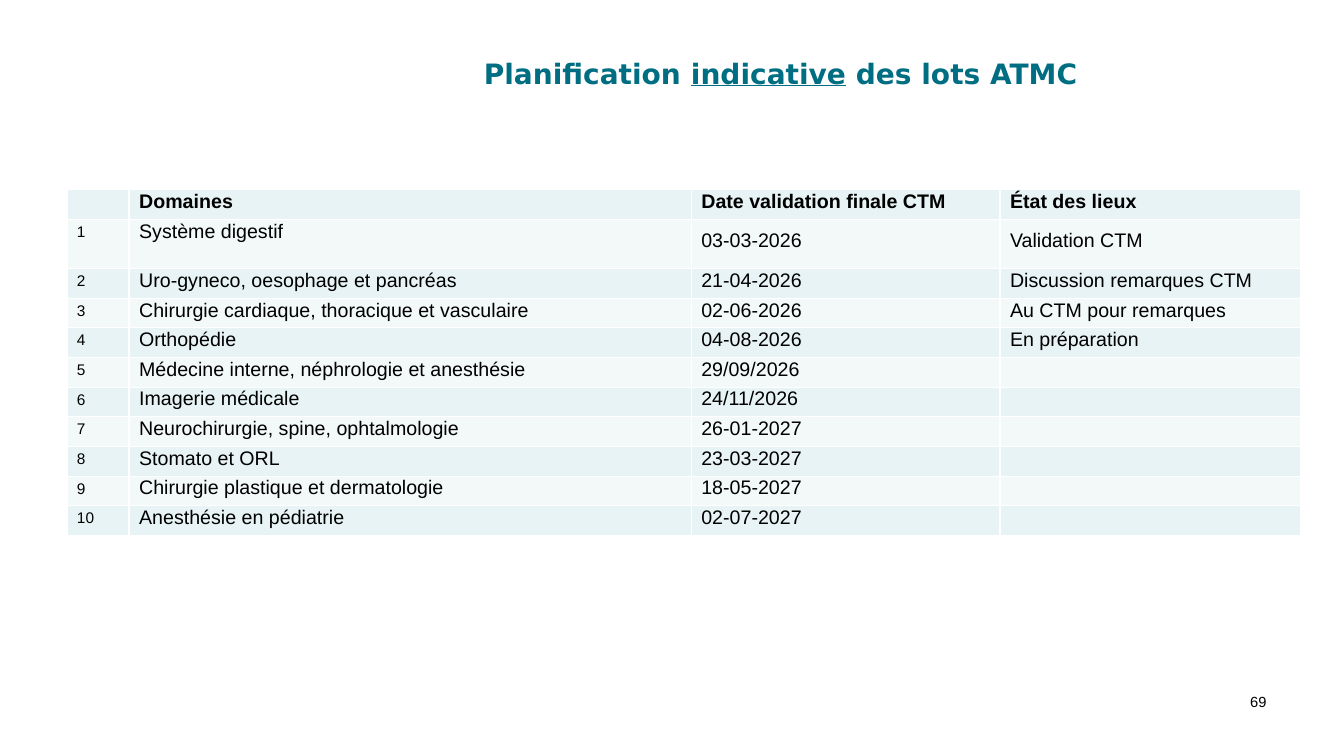
from lxml.etree import SubElement
from pptx import Presentation
from pptx.dml.color import RGBColor
from pptx.enum.text import MSO_ANCHOR, MSO_AUTO_SIZE, PP_ALIGN
from pptx.oxml.ns import qn
from pptx.util import Pt

COLORS = {
    "title": "006E82",
    "text": "000000",
    "border": "FFFFFF",
    "even_row": "E7F3F4",
    "odd_row": "F3F8F9",
}

HEADERS = ("", "Domaines", "Date validation finale CTM", "État des lieux")
LOTS = [
    ("Système digestif", "03-03-2026", "Validation CTM"),
    ("Uro-gyneco, oesophage et pancréas", "21-04-2026", "Discussion remarques CTM"),
    ("Chirurgie cardiaque, thoracique et vasculaire", "02-06-2026", "Au CTM pour remarques"),
    ("Orthopédie", "04-08-2026", "En préparation"),
    ("Médecine interne, néphrologie et anesthésie", "29/09/2026", ""),
    ("Imagerie médicale", "24/11/2026", ""),
    ("Neurochirurgie, spine, ophtalmologie", "26-01-2027", ""),
    ("Stomato et ORL", "23-03-2027", ""),
    ("Chirurgie plastique et dermatologie", "18-05-2027", ""),
    ("Anesthésie en pédiatrie", "02-07-2027", ""),
]
COLUMN_WIDTHS = (44.4, 401.6, 220.5, 214.5)
ROW_HEIGHT = 21.2
FIRST_LOT_HEIGHT = 35.2


def set_font(paragraph, name, size, color, bold=False):
    font = paragraph.font
    font.name, font.size, font.bold = name, Pt(size), bold
    font.color.rgb = RGBColor.from_string(COLORS[color])


def set_margins(target, left=0, top=0):
    target.margin_left, target.margin_top = Pt(left), Pt(top)
    target.margin_right = target.margin_bottom = 0


def place(shape, left, top, width, height):
    shape.left, shape.top = Pt(left), Pt(top)
    shape.width, shape.height = Pt(width), Pt(height)


def set_borders(cell, color, width):
    properties = cell._tc.get_or_add_tcPr()
    for index, side in enumerate(("a:lnL", "a:lnR", "a:lnT", "a:lnB")):
        line = SubElement(properties, qn(side), w=str(Pt(width)))
        fill = SubElement(line, qn("a:solidFill"))
        SubElement(fill, qn("a:srgbClr"), val=COLORS[color])
        # Borders come before the cell fill
        properties.insert(index, line)


def add_title(slide):
    title = slide.shapes.title
    place(title, 75.6, 22.3, 810.7, 54.7)
    frame = title.text_frame
    set_margins(frame, left=270, top=18)
    frame.vertical_anchor = MSO_ANCHOR.TOP
    frame.auto_size = MSO_AUTO_SIZE.NONE
    paragraph = frame.paragraphs[0]
    paragraph.alignment = PP_ALIGN.LEFT
    for text in ("Planification ", "indicative", " des lots ATMC"):
        run = paragraph.add_run()
        run.text = text
        if text == "indicative":
            run.font.underline = True
    set_font(paragraph, "DejaVu Sans", 20, "title", bold=True)


def fill_cell(cell, text, row, column):
    is_number = column == 0
    if is_number:
        top = 2.9
    elif row == 1 and column > 1:
        top = 7.2
    else:
        top = 0.7
    set_margins(cell, left=7.2, top=top)
    cell.fill.solid()
    cell.fill.fore_color.rgb = RGBColor.from_string(COLORS["odd_row" if row % 2 else "even_row"])
    set_borders(cell, "border", 1)
    cell.text = text
    size = 11 if is_number or not text else 14
    set_font(cell.text_frame.paragraphs[0], "Arial", size, "text", bold=row == 0)


def add_lots_table(slide):
    rows = [HEADERS] + [(str(number), *lot) for number, lot in enumerate(LOTS, 1)]
    heights = [FIRST_LOT_HEIGHT if row == 1 else ROW_HEIGHT for row in range(len(rows))]
    table = slide.shapes.add_table(
        len(rows), len(HEADERS), Pt(47.8), Pt(135.5), Pt(sum(COLUMN_WIDTHS)), Pt(sum(heights))
    ).table
    table.first_row = table.horz_banding = False
    for column, width in zip(table.columns, COLUMN_WIDTHS):
        column.width = Pt(width)
    for row, (texts, height) in enumerate(zip(rows, heights)):
        table.rows[row].height = Pt(height)
        for column, text in enumerate(texts):
            fill_cell(table.cell(row, column), text, row, column)


def add_page_number(slide, number):
    frame = slide.shapes.add_textbox(Pt(892.3), Pt(493.9), Pt(13.7), Pt(14.4)).text_frame
    set_margins(frame, left=0.7, top=0.7)
    frame.word_wrap = False
    paragraph = frame.paragraphs[0]
    paragraph.text = number
    set_font(paragraph, "Arial", 10.5, "text")


def main():
    presentation = Presentation()
    presentation.slide_width, presentation.slide_height = Pt(960), Pt(540)
    slide = presentation.slides.add_slide(presentation.slide_layouts[5])
    add_title(slide)
    add_lots_table(slide)
    add_page_number(slide, "69")
    presentation.save("out.pptx")


if __name__ == "__main__":
    main()
